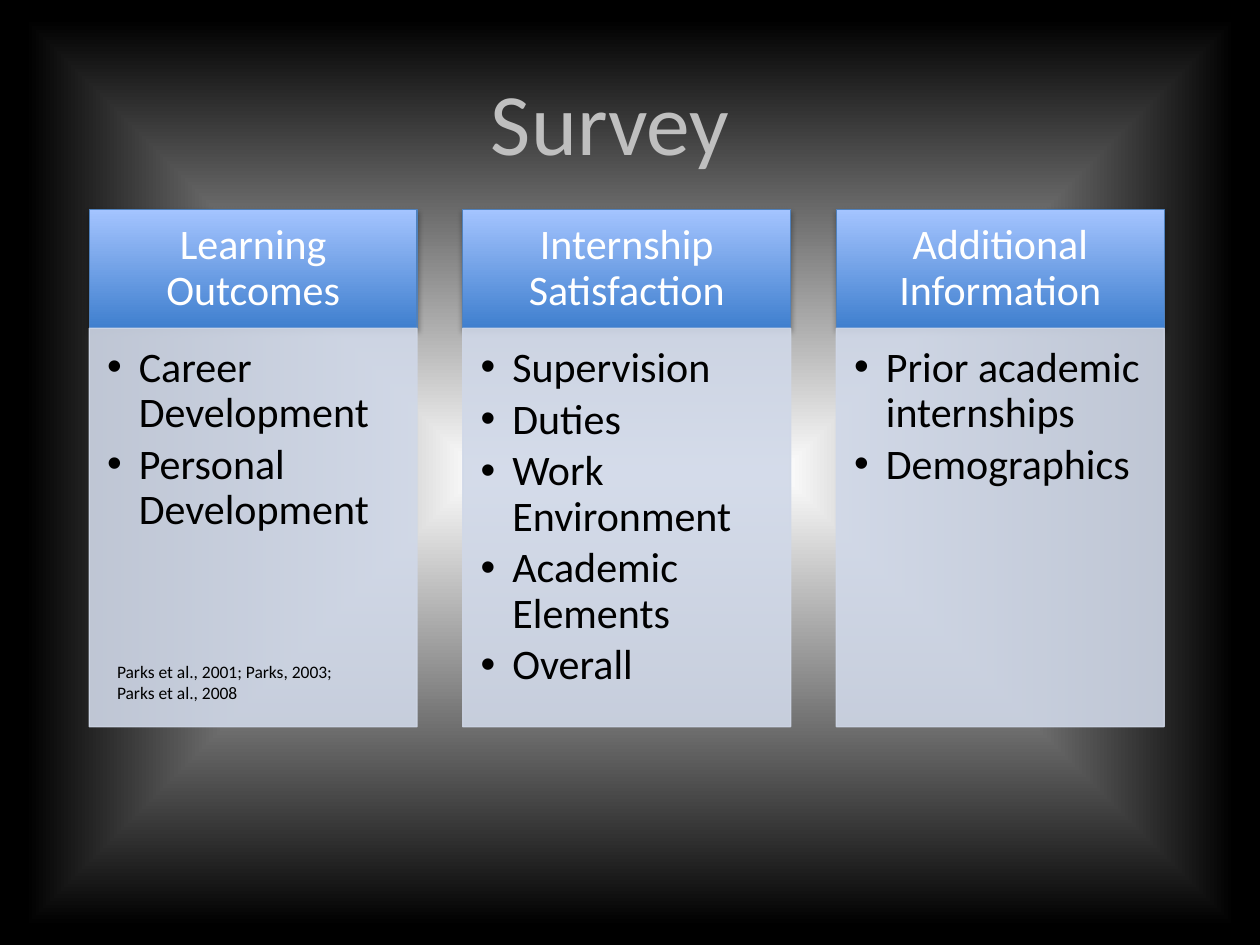
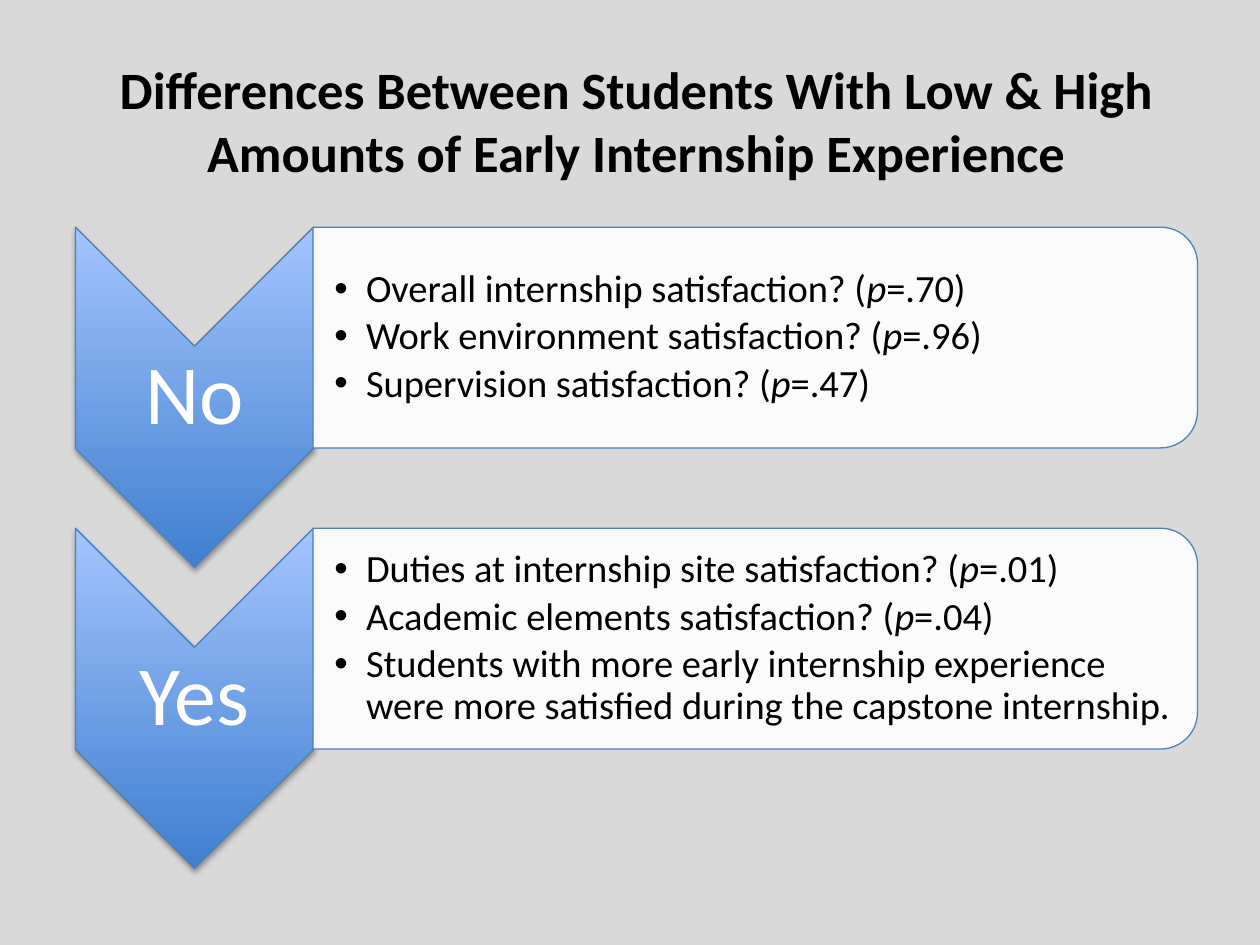
from lxml.etree import SubElement
from pptx import Presentation
from pptx.dml.color import RGBColor
from pptx.enum.shapes import MSO_SHAPE
from pptx.enum.text import MSO_ANCHOR, PP_ALIGN
from pptx.oxml import parse_xml
from pptx.oxml.ns import nsdecls, qn
from pptx.util import Cm, Pt

FONT = "Calibri"
INK = {
    "black": "000000", "white": "FFFFFF", "silver": "BFBFBF", "grey": "D9D9D9",
    "deep": "3F7FCE", "light": "A4C4FF", "edge": "4F81BD", "pale": "D0D8E8",
}
TOPICS = [
    ("Learning Outcomes", ["Career Development", "Personal Development"]),
    ("Internship Satisfaction",
     ["Supervision", "Duties", "Work Environment", "Academic Elements", "Overall"]),
    ("Additional Information", ["Prior academic internships", "Demographics"]),
]
ANSWERS = [
    ("No", ["Overall internship satisfaction? (|p|=.70)",
            "Work environment satisfaction? (|p|=.96)",
            "Supervision satisfaction? (|p|=.47)"]),
    ("Yes", ["Duties at internship site satisfaction? (|p|=.01)",
             "Academic elements satisfaction? (|p|=.04)",
             "Students with more early internship experience were more "
             "satisfied during the capstone internship."]),
]


def color(name):
    """Return the named colour."""
    return RGBColor.from_string(INK[name])


def blend(node, stops, shade):
    """Swap the first solid fill in the node for a gradient."""
    marks = "".join(
        f'<a:gs pos="{pos * 1000}"><a:srgbClr val="{INK[name]}"/></a:gs>'
        for pos, name in stops)
    solid = next(node.iter(qn("a:solidFill")))
    solid.getparent().replace(solid, parse_xml(
        f'<a:gradFill {nsdecls("a")} rotWithShape="0">'
        f"<a:gsLst>{marks}</a:gsLst>{shade}</a:gradFill>"))


def fade(node):
    """Make the solid colours in the node ten percent clear."""
    for solid in node.iter(qn("a:solidFill")):
        SubElement(solid[0], qn("a:alpha"), val="90000")


def form(slide, kind, box, fill, edge, turned=False):
    """Add a preset shape that covers the box, turned a quarter if asked."""
    left, top, width, height = box
    if turned:
        left, top = left + (width - height) / 2, top + (height - width) / 2
        width, height = height, width
    shape = slide.shapes.add_shape(kind, Cm(left), Cm(top), Cm(width), Cm(height))
    shape.rotation = 90 if turned else 0
    shape.shadow.inherit = False
    shape.fill.solid()
    shape.fill.fore_color.rgb = color(fill)
    shape.line.color.rgb = color(edge)
    shape.line.width = Pt(0.75)
    return shape


def glossy(slide, kind, box, turned=False):
    """Add a blue shape with a gradient and a soft shadow."""
    shape = form(slide, kind, box, "deep", "edge", turned)
    props = shape.element.spPr
    blend(props, [(0, "deep"), (100, "light")], '<a:lin ang="16200000" scaled="0"/>')
    props.find(qn("a:effectLst")).append(parse_xml(
        f'<a:outerShdw {nsdecls("a")} blurRad="40000" dist="23000" dir="5400000" '
        f'rotWithShape="0"><a:srgbClr val="{INK["black"]}"><a:alpha val="35000"/>'
        "</a:srgbClr></a:outerShdw>"))
    return shape


def write(shape, lines, size, ink="black", align=PP_ALIGN.CENTER, pads=None,
          anchor=MSO_ANCHOR.MIDDLE, bold=False, space=1, after=0, dots=False):
    """Fill the shape with paragraphs; text between bars is italic."""
    frame = shape.text_frame
    frame.word_wrap = True
    frame.vertical_anchor = anchor
    if pads:
        (frame.margin_left, frame.margin_top,
         frame.margin_right, frame.margin_bottom) = map(Cm, pads)
    for num, line in enumerate(lines):
        para = frame.add_paragraph() if num else frame.paragraphs[0]
        para.alignment = align
        para.line_spacing = space
        para.space_after = Pt(after)
        if dots:
            props = para._p.get_or_add_pPr()
            props.set("marL", str(Cm(0.64)))
            props.set("indent", str(-Cm(0.64)))
            SubElement(props, qn("a:buFont"), typeface="Arial")
            SubElement(props, qn("a:buChar"), char="•")
        font = para.font
        font.name, font.size, font.bold = FONT, Pt(size), bold
        font.color.rgb = color(ink)
        for spot, part in enumerate(line.split("|")):
            run = para.add_run()
            run.text = part
            if spot % 2:
                run.font.italic = True


def label(slide, box, lines, size, **style):
    """Add a text box."""
    shape = slide.shapes.add_textbox(*map(Cm, box))
    write(shape, lines, size, **style)


def points(shape, lines, size, pads, anchor):
    """Write a bulleted list into the shape."""
    write(shape, lines, size, align=PP_ALIGN.LEFT, pads=pads, anchor=anchor,
          space=0.9, after=size * 0.15, dots=True)


def topic(slide, left, head, lines):
    """Add a column with a blue head and a list."""
    top = glossy(slide, MSO_SHAPE.RECTANGLE, (left, 4.22, 6.61, 2.4))
    write(top, [head], 24, "white", pads=(0.48, 0.28, 0.48, 0.28), space=0.9)
    body = form(slide, MSO_SHAPE.RECTANGLE, (left, 6.62, 6.61, 8.03), "pale", "pale")
    fade(body.element.spPr)
    points(body, lines, 24, (0.36, 0.36, 0.48, 0.53), MSO_ANCHOR.TOP)


def answer(slide, top, word, lines):
    """Add a downward chevron with a panel of findings."""
    glossy(slide, MSO_SHAPE.CHEVRON, (1.52, top, 4.8, 6.86), True)
    label(slide, (1.52, top + 2.4, 4.8, 2.06), [word], 48, ink="white",
          pads=[0.08] * 4, space=0.9)
    panel = form(slide, MSO_SHAPE.ROUND_2_SAME_RECTANGLE,
                 (6.31, top, 17.83, 4.45), "white", "edge", True)
    fade(next(panel.element.spPr.iter(qn("a:solidFill"))))
    text = slide.shapes.add_textbox(Cm(6.31), Cm(top + 0.22), Cm(17.63), Cm(4.01))
    points(text, lines, 22, (0.43, 0.05, 0.05, 0.05), MSO_ANCHOR.MIDDLE)


def page(deck, ink):
    """Add a blank slide with a plain background."""
    slide = deck.slides.add_slide(deck.slide_layouts[6])
    slide.background.fill.solid()
    slide.background.fill.fore_color.rgb = color(ink)
    return slide


def survey(deck):
    """Build the slide on the parts of the survey."""
    slide = page(deck, "black")
    blend(slide.element, [(0, "white"), (96, "black")],
          '<a:path path="shape"><a:fillToRect l="50000" t="50000" '
          'r="50000" b="50000"/></a:path>')
    for num, (head, lines) in enumerate(TOPICS):
        topic(slide, 1.8 + num * 7.53, head, lines)
    label(slide, (4.95, 1.24, 14.71, 2.39), ["Survey"], 50, ink="silver",
          anchor=MSO_ANCHOR.TOP)
    label(slide, (2.11, 13.21, 5.72, 1.12),
          ["Parks et al., 2001; Parks, 2003;", "Parks et al., 2008"], 10,
          align=PP_ALIGN.LEFT, anchor=MSO_ANCHOR.TOP)


def results(deck):
    """Build the slide on the differences found."""
    slide = page(deck, "grey")
    for num, (word, lines) in enumerate(ANSWERS):
        answer(slide, 4.58 + num * 6.07, word, lines)
    label(slide, (1.52, 1.02, 22.63, 2.82),
          ["Differences Between Students With Low & High "
           "Amounts of Early Internship Experience"], 30, bold=True,
          anchor=MSO_ANCHOR.TOP)


def main():
    """Build and save the deck."""
    deck = Presentation()
    deck.slide_width, deck.slide_height = Cm(25.4), Cm(19.05)
    survey(deck)
    results(deck)
    deck.save("out.pptx")


if __name__ == "__main__":
    main()
